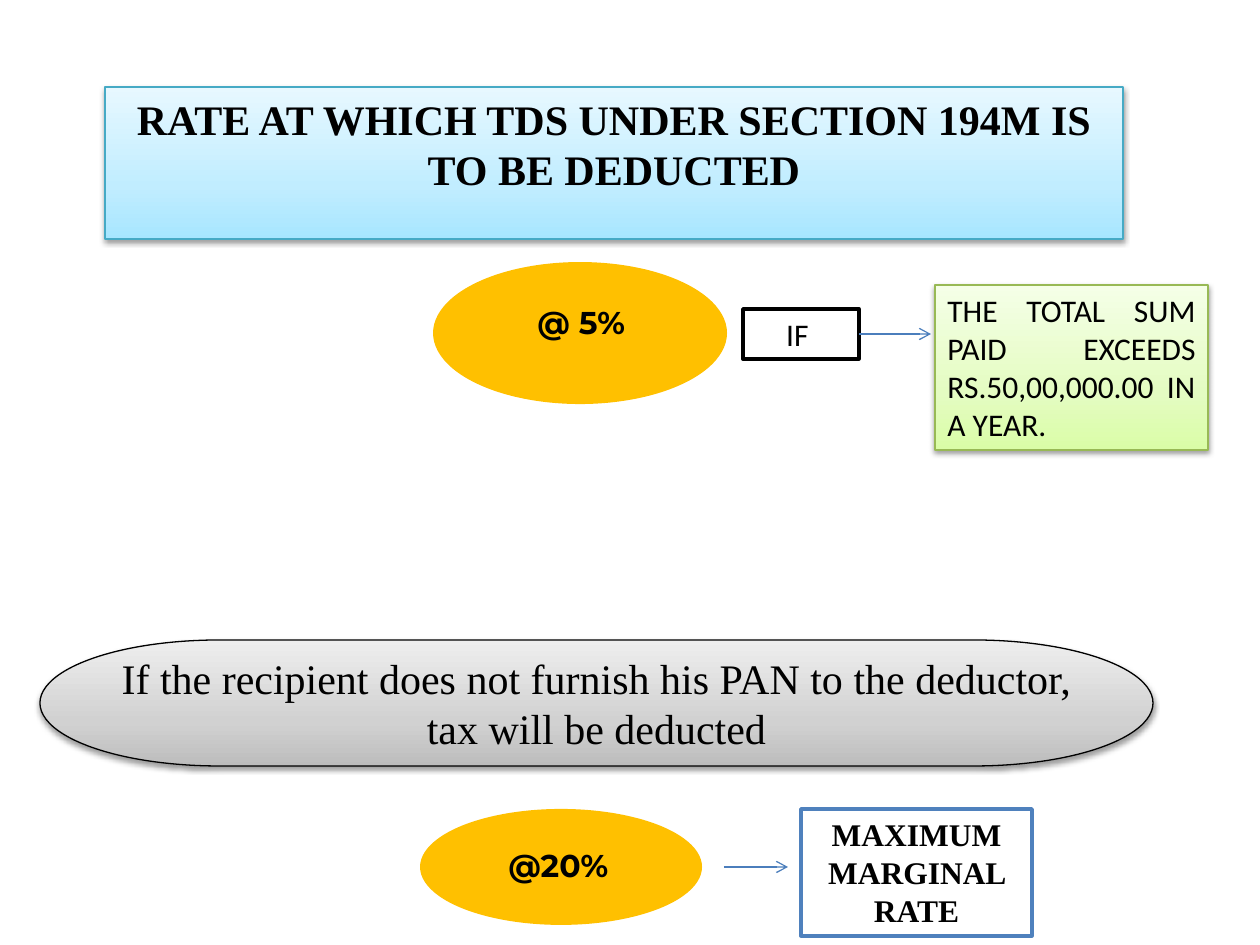
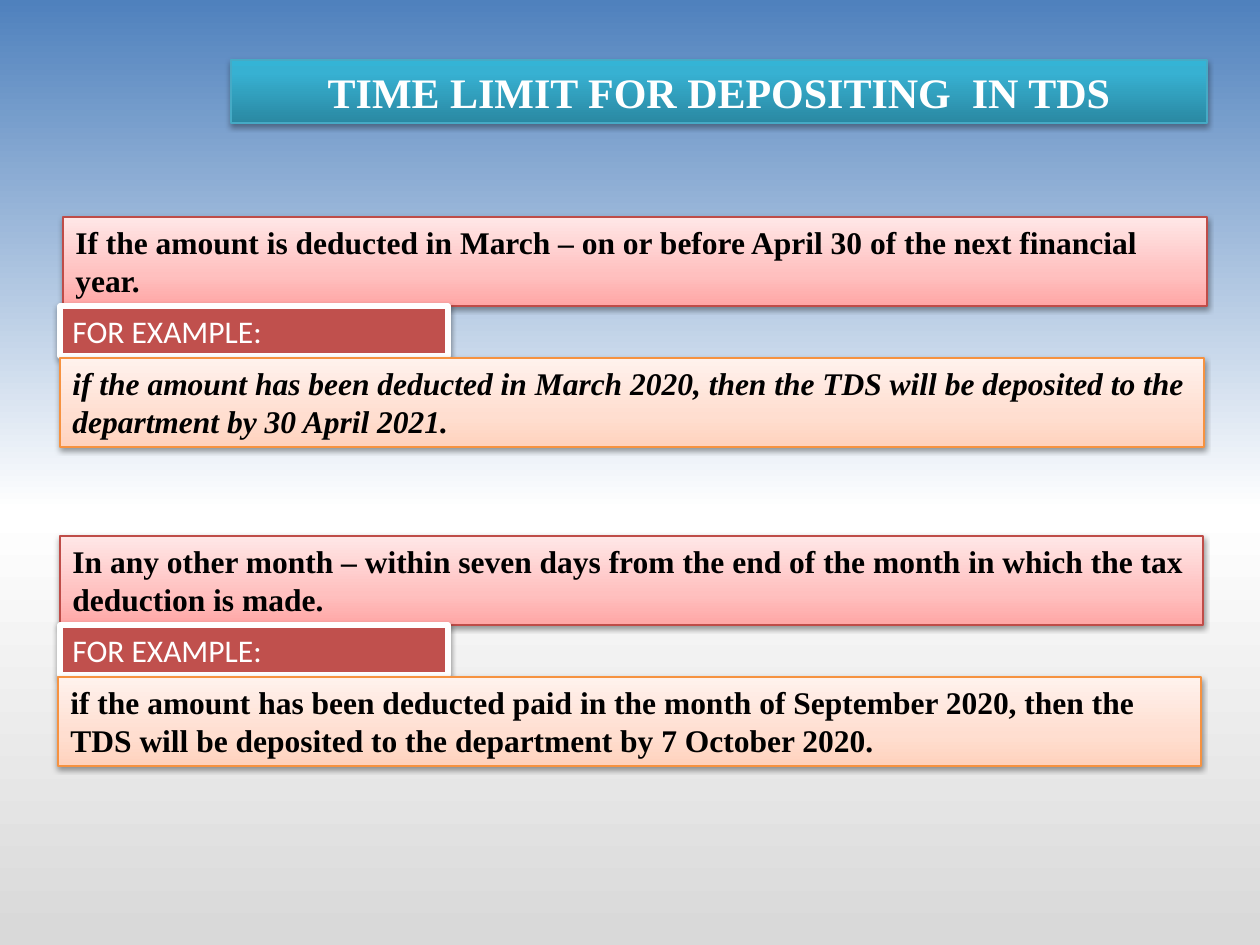
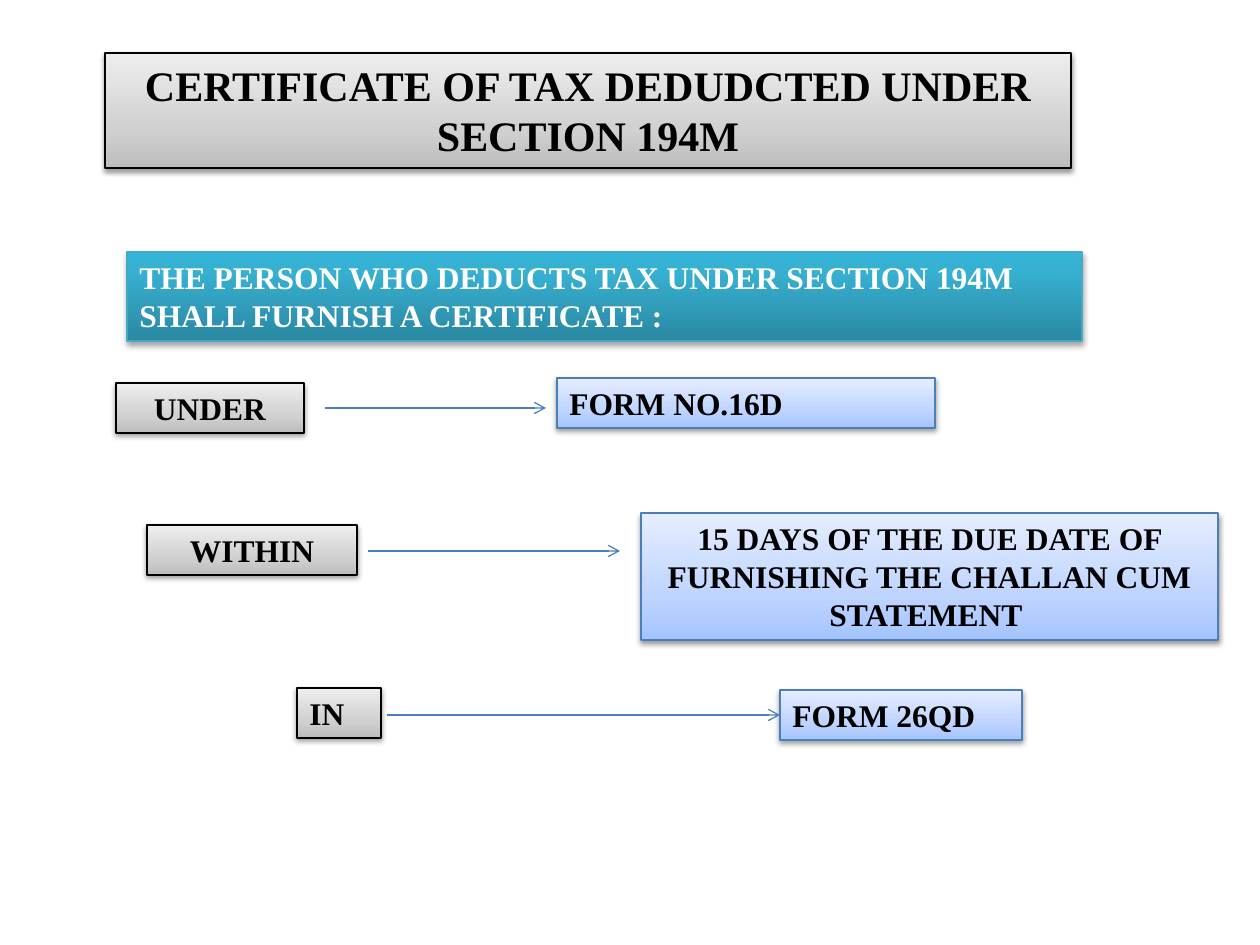
from dataclasses import dataclass, field
from typing import Any

from lxml import etree
from pptx import Presentation
from pptx.dml.color import RGBColor
from pptx.enum.shapes import MSO_CONNECTOR, MSO_SHAPE
from pptx.enum.text import MSO_ANCHOR, PP_ALIGN
from pptx.oxml.ns import qn
from pptx.util import Emu, Pt

RECT = MSO_SHAPE.RECTANGLE
OVAL = MSO_SHAPE.OVAL
PILL = MSO_SHAPE.FLOWCHART_TERMINATOR
LINE = MSO_CONNECTOR.STRAIGHT
LEFT = PP_ALIGN.LEFT
MID = PP_ALIGN.CENTER
FULL = PP_ALIGN.JUSTIFY
TOP = MSO_ANCHOR.TOP
CORE = MSO_ANCHOR.MIDDLE

SCALE = 914400 / 126
SERIF = "Times New Roman"
SANS = "Calibri"
ROUND = "Montserrat"

BLACK = RGBColor(0x00, 0x00, 0x00)
WHITE = RGBColor(0xFF, 0xFF, 0xFF)
GOLD = RGBColor(0xFF, 0xC0, 0x00)
BRICK = RGBColor(0xC0, 0x50, 0x4D)
BLUE = RGBColor(0x4F, 0x81, 0xBD)
INK = RGBColor(0x4B, 0x7E, 0xBC)
AQUA = RGBColor(0x46, 0xAA, 0xC5)
LEAF = RGBColor(0x98, 0xB9, 0x55)
ROSE = RGBColor(0xBF, 0x4C, 0x48)
AMBER = RGBColor(0xF6, 0x92, 0x40)
FOG = RGBColor(0xD9, 0xD9, 0xD9)

Stops = tuple[tuple[int, RGBColor], ...]


def blend(low: RGBColor, mid: RGBColor, high: RGBColor, turn: int = 35) -> Stops:
    return (0, low), (turn, mid), (100, high)


SKY_FADE = blend(RGBColor(0xA7, 0xE6, 0xFF), RGBColor(0xC1, 0xED, 0xFF), RGBColor(0xE7, 0xF8, 0xFF))
GREY_FADE = blend(RGBColor(0xBD, 0xBD, 0xBD), RGBColor(0xD1, 0xD1, 0xD1), RGBColor(0xEE, 0xEE, 0xEE))
LIME_FADE = blend(RGBColor(0xDA, 0xFD, 0xA7), RGBColor(0xE4, 0xFC, 0xC2), RGBColor(0xF5, 0xFF, 0xE7))
TEAL_FADE = blend(RGBColor(0x2A, 0x88, 0xA2), RGBColor(0x37, 0xB1, 0xD2), RGBColor(0x34, 0xB4, 0xD6), 80)
PINK_FADE = blend(RGBColor(0xFF, 0xA6, 0xA5), RGBColor(0xFF, 0xC0, 0xBF), RGBColor(0xFF, 0xE7, 0xE7))
PEACH_FADE = blend(RGBColor(0xFF, 0xD2, 0xBD), RGBColor(0xFF, 0xDE, 0xD0), RGBColor(0xFF, 0xF2, 0xED))
BLUE_FADE = blend(RGBColor(0xA4, 0xC4, 0xFF), RGBColor(0xBF, 0xD4, 0xFF), RGBColor(0xE6, 0xEE, 0xFF))
BACK_FADE: Stops = ((0, BLUE), (54, WHITE), (99, FOG))


@dataclass(frozen=True)
class Look:
    fill: RGBColor | Stops
    line: RGBColor | None = None
    width: float = 0.75
    shade: int = 38
    drop: int = 20000


@dataclass(frozen=True)
class Box:
    text: str
    x: int
    y: int
    w: int
    h: int
    look: Look | None
    form: dict[str, Any] = field(default_factory=dict)
    kind: Any = RECT


SKY = Look(SKY_FADE, AQUA)
GREY = Look(GREY_FADE, BLACK)
LIME = Look(LIME_FADE, LEAF)
TEAL = Look(TEAL_FADE, AQUA, shade=35, drop=23000)
PINK = Look(PINK_FADE, ROSE)
PEACH = Look(PEACH_FADE, AMBER)
PALE = Look(BLUE_FADE, INK)
TAG = Look(BRICK, WHITE, 3)
DISC = Look(GOLD, shade=0)
FRAME = Look(WHITE, BLACK, 2, shade=0)
EDGE = Look(WHITE, BLUE, 2, shade=0)

HEAD = dict(size=24, align=MID)
NOTE = dict(font=SANS, bold=False)
RATE = dict(font=ROUND)


def px(size: int) -> Emu:
    return Emu(round(size * SCALE))


def fade(fill: Any, root: Any, stops: Stops, angle: int) -> None:
    fill.gradient()
    fill.gradient_angle = angle
    items = next(root.iter(qn("a:gsLst")))
    for item in list(items):
        items.remove(item)
    for spot, tone in stops:
        stop = etree.SubElement(items, qn("a:gs"), pos=str(spot * 1000))
        etree.SubElement(stop, qn("a:srgbClr"), val=str(tone))


def shadow(shape: Any, look: Look) -> None:
    shape.shadow.inherit = False
    if look.shade:
        root = shape.element.spPr.find(qn("a:effectLst"))
        cast = etree.SubElement(root, qn("a:outerShdw"), blurRad="40000",
                                dist=str(look.drop), dir="5400000", rotWithShape="0")
        tone = etree.SubElement(cast, qn("a:srgbClr"), val=str(BLACK))
        etree.SubElement(tone, qn("a:alpha"), val=str(look.shade * 1000))


def write(shape: Any, text: str, *, font: str = SERIF, size: int = 18,
          tone: RGBColor = BLACK, bold: bool = True, slant: bool = False,
          align: Any = LEFT, anchor: Any = TOP) -> None:
    frame = shape.text_frame
    frame.word_wrap = True
    frame.vertical_anchor = anchor
    para = frame.paragraphs[0]
    para.alignment = align
    run = para.add_run()
    run.text = text
    run.font.name = font
    run.font.size = Pt(size)
    run.font.color.rgb = tone
    run.font.bold = bold
    run.font.italic = slant


def draw(slide: Any, box: Box) -> Any:
    area = [px(side) for side in (box.x, box.y, box.w, box.h)]
    look = box.look
    if look is None:
        shape = slide.shapes.add_textbox(*area)
    else:
        shape = slide.shapes.add_shape(box.kind, *area)
        if isinstance(look.fill, RGBColor):
            shape.fill.solid()
            shape.fill.fore_color.rgb = look.fill
        else:
            fade(shape.fill, shape.element.spPr, look.fill, 90)
        if look.line is None:
            shape.line.fill.background()
        else:
            shape.line.color.rgb = look.line
            shape.line.width = Pt(look.width)
        shadow(shape, look)
    if box.text:
        write(shape, box.text, **box.form)
    return shape


def arrow(slide: Any, start: int, stop: int, y: int,
          source: Any = None, goal: Any = None) -> None:
    link = slide.shapes.add_connector(LINE, px(start), px(y), px(stop), px(y))
    if source is not None:
        link.begin_connect(source, 3)
    if goal is not None:
        link.end_connect(goal, 1)
    link.line.color.rgb = INK
    link.line.width = Pt(0.75)
    root = link.element.spPr
    etree.SubElement(root.find(qn("a:ln")), qn("a:tailEnd"), type="arrow")
    etree.SubElement(root, qn("a:effectLst"))


def rates(slide: Any) -> None:
    for box in (
        Box("RATE AT WHICH TDS UNDER SECTION 194M IS TO BE DEDUCTED",
            105, 87, 1018, 152, SKY, HEAD),
        Box("", 433, 262, 294, 142, DISC, kind=OVAL),
        Box("@ 5%", 525, 297, 152, 50, None, RATE),
        Box("If the recipient does not furnish his PAN to the deductor, tax will be deducted",
            40, 640, 1113, 126, GREY, dict(HEAD, bold=False, anchor=CORE), PILL),
        Box("", 420, 809, 282, 116, DISC, kind=OVAL),
        Box("MAXIMUM MARGINAL RATE", 801, 809, 231, 127, EDGE, dict(align=MID)),
        Box("@20%", 496, 840, 130, 50, None, RATE),
        Box("THE TOTAL SUM PAID EXCEEDS RS.50,00,000.00 IN A YEAR.",
            935, 285, 273, 165, LIME, dict(NOTE, align=FULL)),
    ):
        draw(slide, box)
    test = draw(slide, Box("IF ", 743, 309, 116, 50, FRAME, dict(NOTE, align=MID)))
    arrow(slide, 859, 931, 334, source=test)
    arrow(slide, 724, 788, 867)


def limits(slide: Any) -> None:
    fade(slide.background.fill, slide.element, BACK_FADE, 270)
    draw(slide, Box("TIME LIMIT FOR DEPOSITING  IN TDS", 231, 60, 976, 63, TEAL,
                    dict(HEAD, tone=WHITE)))
    rules = (
        (217, 63, 60, 1144, True,
         "If the amount is deducted in March – on or before April 30 of the next financial year.",
         "if the amount has been deducted in March 2020, then the TDS will be deposited "
         "to the department by 30 April 2021."),
        (536, 60, 58, 1143, False,
         "In any other month – within seven days from the end of the month in which the tax "
         "deduction is made. ",
         "if the amount has been deducted paid in the month of September 2020, then the TDS "
         "will be deposited to the department by 7 October 2020."),
    )
    for y, x, inset, wide, slant, rule, case in rules:
        draw(slide, Box(rule, x, y, wide, 89, PINK))
        draw(slide, Box("FOR EXAMPLE:", 60, y + 89, 388, 50, TAG, dict(NOTE, tone=WHITE)))
        draw(slide, Box(case, inset, y + 141, wide, 89, PEACH, dict(slant=slant)))


def proof(slide: Any) -> None:
    mid = dict(align=MID)
    for box in (
        Box("CERTIFICATE OF TAX DEDUDCTED UNDER SECTION 194M",
            105, 53, 966, 115, GREY, HEAD),
        Box("THE PERSON WHO DEDUCTS TAX UNDER SECTION 194M SHALL FURNISH A CERTIFICATE :",
            127, 252, 955, 89, TEAL, dict(tone=WHITE)),
        Box("UNDER", 116, 383, 188, 50, GREY, mid),
        Box("FORM NO.16D", 557, 378, 378, 50, PALE),
        Box("WITHIN", 147, 525, 210, 50, GREY, mid),
        Box("15 DAYS OF THE DUE DATE OF FURNISHING THE CHALLAN CUM STATEMENT ",
            641, 513, 577, 127, PALE, mid),
        Box("IN", 297, 688, 84, 50, GREY),
    ):
        draw(slide, box)
    form = draw(slide, Box("FORM 26QD", 780, 690, 242, 50, PALE))
    arrow(slide, 325, 546, 408)
    arrow(slide, 368, 620, 551)
    arrow(slide, 387, 780, 715, goal=form)


def main() -> None:
    deck = Presentation()
    deck.slide_width = px(1260)
    deck.slide_height = px(945)
    for build in (rates, limits, proof):
        build(deck.slides.add_slide(deck.slide_layouts[6]))
    deck.save("out.pptx")


if __name__ == "__main__":
    main()
